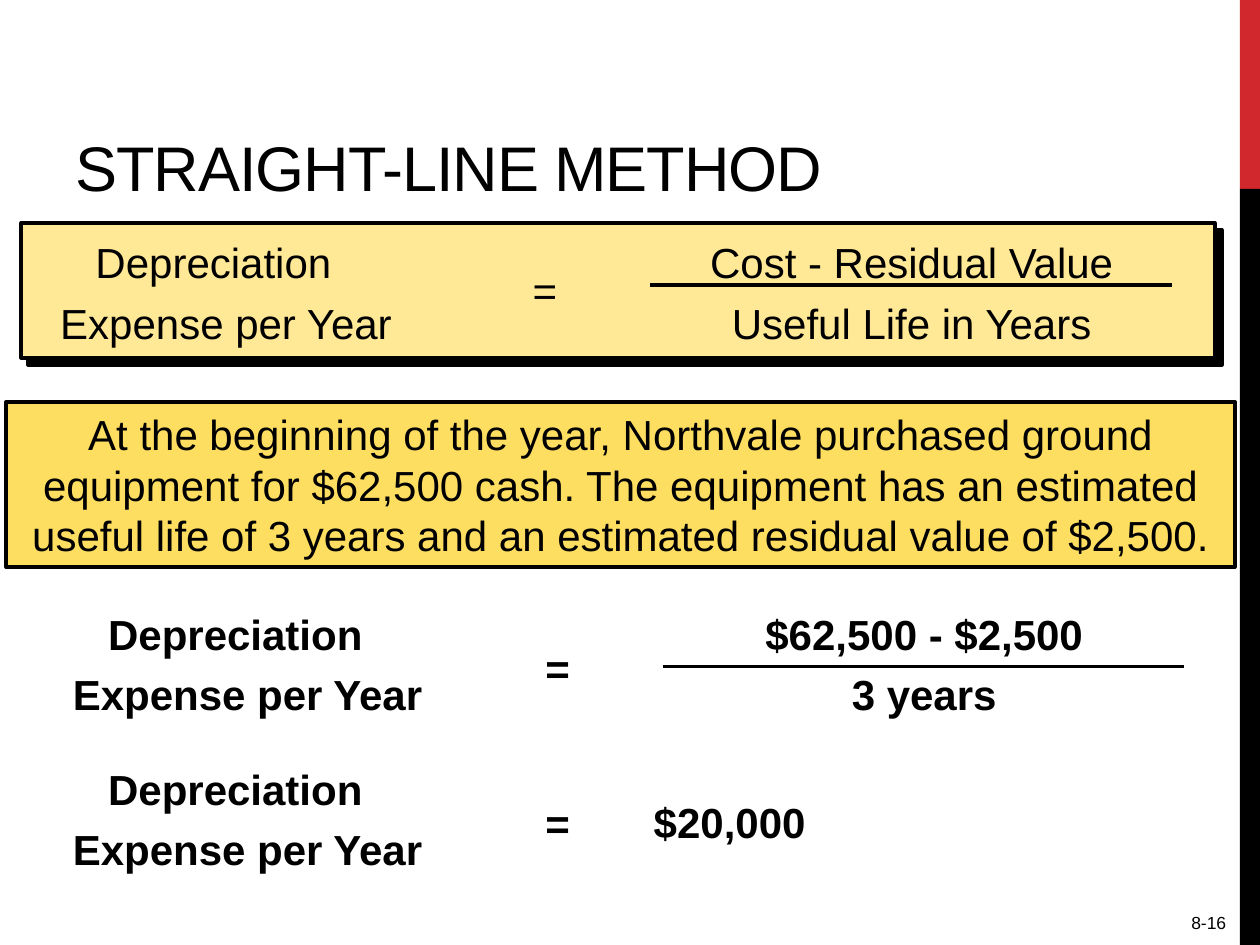
from lxml import etree
from pptx import Presentation
from pptx import util as u
from pptx.dml.color import RGBColor
from pptx.enum import shapes, text
from pptx.oxml import ns

BLACK = RGBColor(0x00, 0x00, 0x00)
RED = RGBColor(0xD1, 0x28, 0x2E)
CREAM = RGBColor(0xFF, 0xE9, 0x96)
GOLD = RGBColor(0xFE, 0xDE, 0x61)
LEFT, CENTER, RIGHT = text.PP_ALIGN.LEFT, text.PP_ALIGN.CENTER, text.PP_ALIGN.RIGHT
LABEL = "Depreciation\nExpense per Year"


class SlideBuilder:
    font = "Arial"
    size = 24

    def __init__(self, prs):
        self.s = prs.slides.add_slide(prs.slide_layouts[5])

    def box(self, *at):
        return [u.Inches(v) for v in at]

    def set_text(self, tf, words, size=None, bold=False, align=LEFT, spacing=1.0, indent=0):
        tf.word_wrap = True
        tf.text = words
        for p in tf.paragraphs:
            p.alignment = align
            p.line_spacing = spacing
            for r in p.runs:
                r.font.name = self.font
                r.font.size = u.Pt(size or self.size)
                r.font.bold = bold
                r.font.color.rgb = BLACK
        if indent:
            pPr = tf.paragraphs[0]._p.get_or_add_pPr()
            pPr.set("marL", "0")
            pPr.set("indent", str(u.Inches(indent)))

    def title(self, words, *at):
        sp = self.s.shapes.title
        sp.left, sp.top, sp.width, sp.height = self.box(*at)
        self.set_text(sp.text_frame, words, size=36)
        sp.text_frame.vertical_anchor = text.MSO_ANCHOR.BOTTOM
        sp.text_frame.paragraphs[0].runs[0]._r.get_or_add_rPr().set("spc", "-60")

    def rect(self, fill, *at, outlined=False):
        sp = self.s.shapes.add_shape(shapes.MSO_SHAPE.RECTANGLE, *self.box(*at))
        sp.shadow.inherit = False
        sp.fill.solid()
        sp.fill.fore_color.rgb = fill
        if outlined:
            sp.line.color.rgb = BLACK
            sp.line.width = u.Pt(2.25)
        else:
            sp.line.fill.background()
        return sp

    def hard_shadow(self, sp):
        effects = sp._element.spPr.find(ns.qn("a:effectLst"))
        shadow = etree.SubElement(effects, ns.qn("a:outerShdw"), blurRad="0",
                                  dist=str(u.Pt(5.7)), dir="2700000",
                                  algn="tl", rotWithShape="0")
        etree.SubElement(shadow, ns.qn("a:srgbClr"), val=str(BLACK))

    def text(self, words, *at, **style):
        sp = self.s.shapes.add_textbox(*self.box(*at))
        self.set_text(sp.text_frame, words, **style)

    def line(self, x1, x2, y):
        c = self.s.shapes.add_connector(shapes.MSO_CONNECTOR.STRAIGHT,
                                        *self.box(x1, y, x2, y))
        c.line.color.rgb = BLACK
        c.line.width = u.Pt(2)
        etree.SubElement(c._element.spPr, ns.qn("a:effectLst"))

    def label(self, x, y, width, bold=False):
        self.text(LABEL, x, y, width, 1.07, bold=bold, spacing=1.2, indent=0.28)

    def equals(self, x, y, bold=False):
        self.text("=", x, y, 0.4, 0.5, bold=bold)

    def fraction(self, words, x, y, line_y, bold=False):
        self.text(words, x, y, 5.01, 1.07, bold=bold, align=CENTER, spacing=1.2)
        self.line(x + 0.43, x + 4.57, line_y)


def main():
    prs = Presentation()
    prs.slide_width, prs.slide_height = u.Inches(10), u.Inches(7.5)
    b = SlideBuilder(prs)

    b.rect(RED, 9.84, 0, 0.16, 1.5)
    b.rect(BLACK, 9.84, 1.5, 0.16, 6)
    b.title("STRAIGHT-LINE METHOD", 0.5, 0.17, 9.17, 1.5)

    b.hard_shadow(b.rect(CREAM, 0.17, 1.77, 9.47, 1.07, outlined=True))
    b.label(0.38, 1.75, 2.86)
    b.equals(4.13, 2.05)
    b.fraction("Cost - Residual Value\vUseful Life in Years", 4.73, 1.75, 2.26)

    sp = b.rect(GOLD, 0.05, 3.19, 9.75, 1.31, outlined=True)
    b.set_text(sp.text_frame,
               "At the beginning of the year, Northvale purchased ground equipment "
               "for $62,500 cash. The equipment has an estimated useful life of "
               "3 years and an estimated residual value of $2,500.", align=CENTER)

    for y in (4.7, 5.93):
        b.label(0.48, y, 3, bold=True)
        b.equals(4.23, y + 0.35, bold=True)
    b.fraction("$62,500 - $2,500\v3 years", 4.83, 4.7, 5.29, bold=True)
    b.text("$20,000", 4.91, 6.27, 2.09, 0.5, bold=True, indent=0.18)

    b.text("8-16", 8, 7.19, 1.83, 0.31, size=10, align=RIGHT)
    prs.save("out.pptx")


if __name__ == "__main__":
    main()
